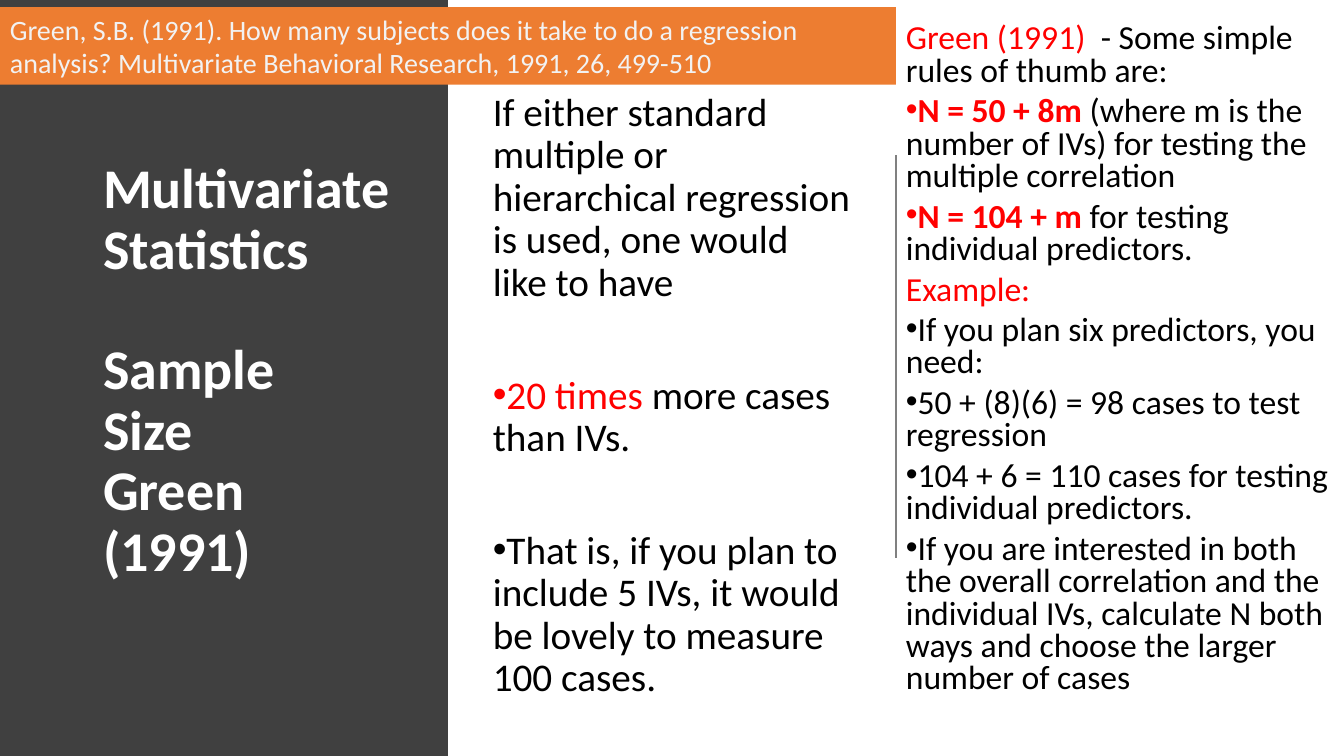
from dataclasses import dataclass

from lxml.etree import SubElement
from pptx import Presentation
from pptx.dml.color import RGBColor
from pptx.enum.shapes import MSO_CONNECTOR, MSO_SHAPE
from pptx.enum.text import MSO_ANCHOR, MSO_AUTO_SIZE, PP_ALIGN
from pptx.oxml.ns import qn
from pptx.util import Inches, Pt


@dataclass(frozen=True)
class Theme:
    font: str = "Calibri"
    panel: str = "404040"
    accent: str = "ED7D31"
    rule: str = "808080"
    white: str = "FFFFFF"
    pale: str = "F2F2F2"
    ink: str = "000000"
    red: str = "FF0000"
    title_size: int = 40
    body_size: int = 28
    rules_size: int = 24
    citation_size: int = 20


class SlideBuilder:
    """Places elements on a grid of 12 columns and 15 rows."""

    def __init__(self, deck, theme):
        self.theme = theme
        self.slide = deck.slides.add_slide(deck.slide_layouts[1])
        self.column = deck.slide_width / 12
        self.row = deck.slide_height / 15

    def area(self, left, top, width, height):
        return (round(left * self.column), round(top * self.row),
                round(width * self.column), round(height * self.row))

    def block(self, *cells, color):
        box = self.slide.shapes.add_shape(MSO_SHAPE.RECTANGLE, *self.area(*cells))
        box.shadow.inherit = False
        box.fill.solid()
        box.fill.fore_color.rgb = RGBColor.from_string(color)
        box.line.fill.background()
        return box

    def text_box(self, *cells):
        return self.slide.shapes.add_textbox(*self.area(*cells))

    def placeholder(self, index, *cells):
        box = self.slide.placeholders[index]
        box.left, box.top, box.width, box.height = self.area(*cells)
        return box

    def vertical_rule(self, column, top, bottom):
        x, y, _, height = self.area(column, top, 0, bottom - top)
        line = self.slide.shapes.add_connector(MSO_CONNECTOR.STRAIGHT, x, y, x, y + height)
        line.line.color.rgb = RGBColor.from_string(self.theme.rule)
        line.line.width = Pt(1)
        SubElement(line.element.spPr, qn("a:effectLst"))

    def fill_text(self, box, paragraphs, size, spacing=1.0, before=0, after=0,
                  bold=False, anchor=MSO_ANCHOR.TOP):
        """Each paragraph is (bulleted, [(text, color, emphasis), ...])."""
        frame = box.text_frame
        frame.word_wrap = True
        frame.auto_size = MSO_AUTO_SIZE.NONE
        frame.vertical_anchor = anchor
        for number, (bulleted, runs) in enumerate(paragraphs):
            para = frame.add_paragraph() if number else frame.paragraphs[0]
            para.alignment = PP_ALIGN.LEFT
            para.line_spacing = spacing
            para.space_before = Pt(before if number else 0)
            para.space_after = Pt(after)
            self.set_bullet(para, bulleted)
            for text, color, emphasis in runs:
                for part, line in enumerate(text.split("\n")):
                    if part:
                        para.add_line_break()
                    span = para.add_run()
                    span.text = line
                    span.font.name = self.theme.font
                    span.font.size = Pt(size)
                    span.font.bold = bold or emphasis
                    span.font.color.rgb = RGBColor.from_string(color)

    @staticmethod
    def set_bullet(para, bulleted):
        properties = para._p.get_or_add_pPr()
        properties.set("marL", "0")
        properties.set("indent", str(-Inches(0.25) if bulleted else 0))
        if bulleted:
            SubElement(properties, qn("a:buFont"), typeface="Arial")
            SubElement(properties, qn("a:buChar"), char="•")
        else:
            SubElement(properties, qn("a:buNone"))


def main():
    deck = Presentation()
    deck.slide_width, deck.slide_height = Inches(13.33), Inches(7.5)
    theme = Theme()
    page = SlideBuilder(deck, theme)

    def plain(text, color=theme.ink):
        return text, color, False

    def strong(text):
        return text, theme.red, True

    # Dark panel with the title on top of it
    title = page.placeholder(0, 0.83, 3.08, 2.85, 9.54)
    panel = page.block(0, 0, 4, 15, color=theme.panel)
    title.element.addprevious(panel.element)
    page.fill_text(title, [
        (False, [plain("Multivariate Statistics", theme.white)]),
        (False, [plain("Sample\nSize\nGreen (1991)", theme.white)]),
    ], theme.title_size, spacing=0.9, before=43, bold=True)

    # Cases wanted for each predictor
    body = page.placeholder(1, 4.31, 1.74, 3.38, 12.26)
    page.fill_text(body, [
        (False, [plain("If either standard multiple or hierarchical regression "
                       "is used, one would like to have")]),
        (True, [plain("20 times ", theme.red), plain("more cases than IVs.")]),
        (True, [plain("That is, if you plan to include 5 IVs, it would be lovely "
                      "to measure 100 cases.")]),
    ], theme.body_size, spacing=0.9, before=50.5)

    # Rules of thumb and example
    page.vertical_rule(8, 3.08, 11.08)
    rules = page.text_box(8, 0.38, 4, 14.62)
    page.fill_text(rules, [
        (False, [plain("Green (1991)  ", theme.red),
                 plain("- Some simple rules of thumb are:")]),
        (True, [strong("N = 50 + 8m "),
                plain("(where m is the number of IVs) for testing the multiple correlation")]),
        (True, [strong("N = 104 + m "), plain("for testing individual predictors.")]),
        (False, [plain("Example:", theme.red)]),
        (True, [plain("If you plan six predictors, you need:")]),
        (True, [plain("50 + (8)(6) = 98 cases to test regression")]),
        (True, [plain("104 + 6 = 110 cases for testing individual predictors.")]),
        (True, [plain("If you are interested in both the overall correlation and the "
                      "individual IVs, calculate N both ways and choose the larger "
                      "number of cases")]),
    ], theme.rules_size, spacing=0.8, after=6)

    # Citation banner
    banner = page.block(0, 0.14, 8, 1.54, color=theme.accent)
    page.fill_text(banner, [
        (False, [plain("Green, S.B. (1991). How many subjects does it take to do a "
                       "regression analysis? Multivariate Behavioral Research, 1991, "
                       "26, 499-510", theme.pale)]),
    ], theme.citation_size, anchor=MSO_ANCHOR.MIDDLE)

    deck.save("out.pptx")


if __name__ == "__main__":
    main()
